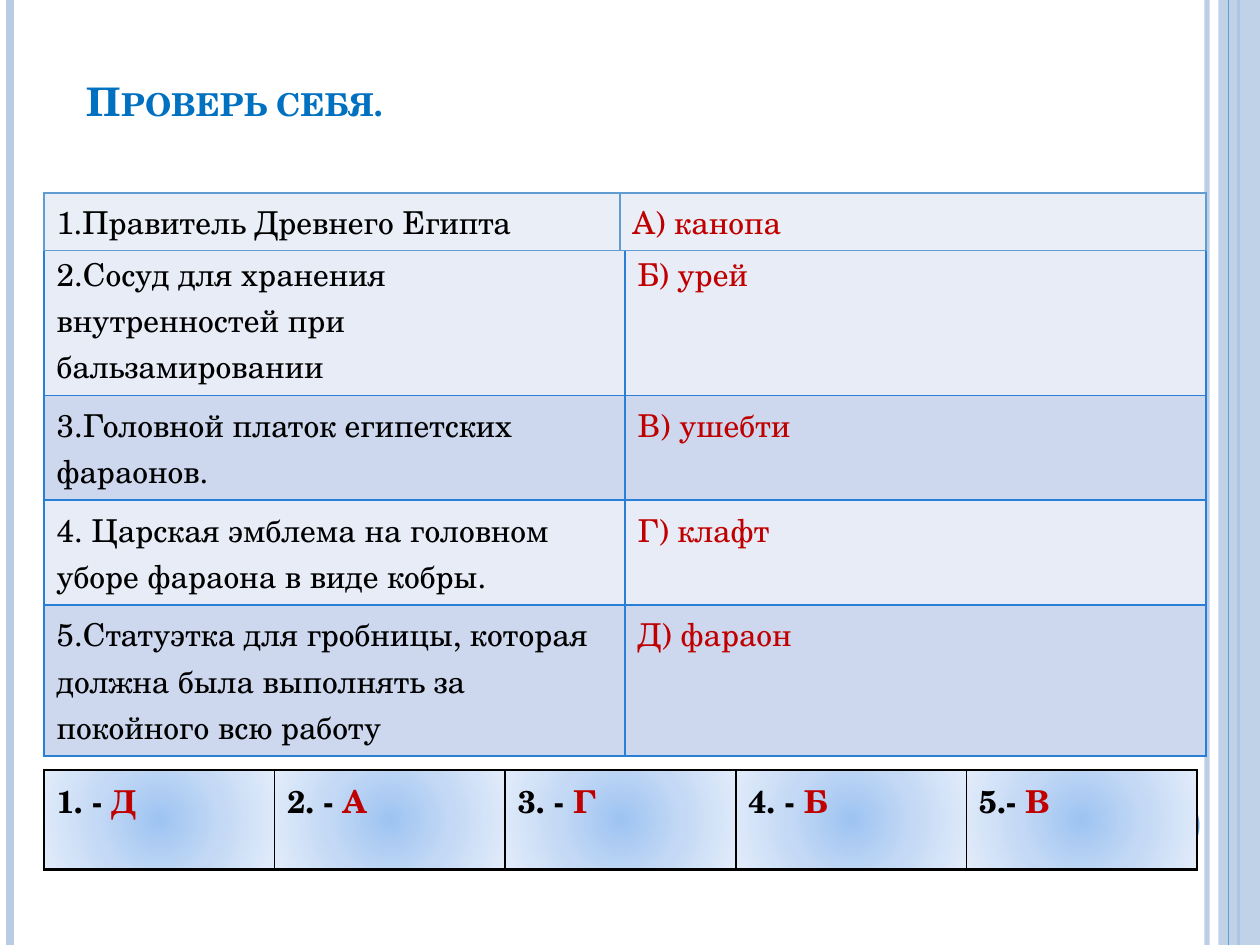
from lxml.etree import SubElement
from pptx import Presentation
from pptx.dml.color import RGBColor
from pptx.enum.shapes import MSO_CONNECTOR, MSO_SHAPE
from pptx.enum.text import MSO_ANCHOR
from pptx.oxml.ns import qn
from pptx.util import Inches, Pt

FONT = "TeX Gyre Schola"
BLACK = RGBColor(0x00, 0x00, 0x00)
RED = RGBColor(0xC0, 0x00, 0x00)
TITLE_BLUE = RGBColor(0x00, 0x70, 0xC0)
PALE_BLUE = RGBColor(0xB7, 0xCC, 0xE5)
ACCENT_BLUE = RGBColor(0x62, 0x9D, 0xD1)
GRID_BLUE = RGBColor(0x29, 0x7F, 0xD5)
FIRST_ROW = RGBColor(0xEA, 0xEF, 0xF7)
LIGHT_ROW = RGBColor(0xE8, 0xEC, 0xF7)
DARK_ROW = RGBColor(0xCD, 0xD8, 0xEF)
GLOW_STOPS = [
    (0, RGBColor(0x9E, 0xC4, 0xF2)),
    (50, RGBColor(0xC4, 0xD9, 0xF5)),
    (100, RGBColor(0xE2, 0xEC, 0xFA)),
]

FIRST_QUESTION = [("1.Правитель Древнего Египта", "А) канопа")]
QUESTIONS = [
    ("2.Сосуд для хранения внутренностей при бальзамировании", "Б) урей"),
    ("3.Головной платок египетских фараонов.", "В) ушебти"),
    ("4. Царская эмблема на головном уборе фараона в виде кобры.", "Г) клафт"),
    ("5.Статуэтка для гробницы, которая должна была выполнять за покойного всю работу",
     "Д) фараон"),
]
ANSWERS = [("1. - ", "Д"), ("2. - ", "А"), ("3. - ", "Г"), ("4. - ", "Б"), ("5.- ", "В")]


def set_alpha(element, percent):
    color = next(element.iter(qn("a:srgbClr")))
    SubElement(color, qn("a:alpha"), val=str(percent * 1000))


def add_stripe(slide, x, color, width, alpha=100):
    line = slide.shapes.add_connector(
        MSO_CONNECTOR.STRAIGHT, Inches(x), 0, Inches(x), Inches(7.5))
    line.line.color.rgb = color
    line.line.width = Pt(width)
    properties = line._element.spPr
    SubElement(properties, qn("a:effectLst"))
    if alpha < 100:
        set_alpha(properties, alpha)


def add_block(slide, kind, left, top, width, height, color, alpha=100):
    shape = slide.shapes.add_shape(
        kind, Inches(left), Inches(top), Inches(width), Inches(height))
    shape.shadow.inherit = False
    shape.fill.solid()
    shape.fill.fore_color.rgb = color
    shape.line.fill.background()
    if alpha < 100:
        set_alpha(shape._element.spPr, alpha)


def add_title(slide, text):
    box = slide.shapes.add_textbox(Inches(0.59), Inches(0.3), Inches(8.11), Inches(0.69))
    frame = box.text_frame
    frame.word_wrap = True
    frame.vertical_anchor = MSO_ANCHOR.BOTTOM
    frame.margin_bottom = 0
    run = frame.paragraphs[0].add_run()
    run.text = text
    run.font.name = FONT
    run.font.size = Pt(22.5)
    run.font.bold = True
    run.font.color.rgb = TITLE_BLUE
    run._r.get_or_add_rPr().set("cap", "small")


def set_borders(cell, color, width, bottom_width):
    properties = cell._tc.get_or_add_tcPr()
    for side in "LRTB":
        points = bottom_width if side == "B" else width
        line = SubElement(properties, qn(f"a:ln{side}"), w=str(Pt(points)))
        fill = SubElement(line, qn("a:solidFill"))
        SubElement(fill, qn("a:srgbClr"), val=str(color))


def fill_with_glow(cell):
    gradient = SubElement(cell._tc.get_or_add_tcPr(), qn("a:gradFill"), rotWithShape="1")
    stops = SubElement(gradient, qn("a:gsLst"))
    for position, color in GLOW_STOPS:
        stop = SubElement(stops, qn("a:gs"), pos=str(position * 1000))
        SubElement(stop, qn("a:srgbClr"), val=str(color))
    circle = SubElement(gradient, qn("a:path"), path="circle")
    SubElement(circle, qn("a:fillToRect"), l="50000", t="50000", r="50000", b="50000")


def write_cell(cell, parts, bold=False):
    paragraph = cell.text_frame.paragraphs[0]
    paragraph.font.name = FONT
    paragraph.font.size = Pt(18)
    paragraph.font.bold = bold
    for text, color in parts:
        run = paragraph.add_run()
        run.text = text
        run.font.color.rgb = color


def add_grid(slide, left, top, widths, heights):
    frame = slide.shapes.add_table(
        len(heights), len(widths), Inches(left), Inches(top),
        Inches(sum(widths)), Inches(sum(heights)))
    table = frame.table
    table.first_row = False
    table.horz_banding = False
    for column, width in zip(table.columns, widths):
        column.width = Inches(width)
    for row, height in zip(table.rows, heights):
        row.height = Inches(height)
    return table


def add_question_table(slide, top, widths, heights, questions, fills, border):
    table = add_grid(slide, 0.35, top, widths, heights)
    for index, texts in enumerate(questions):
        for column, (text, color) in enumerate(zip(texts, (BLACK, RED))):
            cell = table.cell(index, column)
            write_cell(cell, [(text, color)])
            set_borders(cell, border, 1, 1)
            cell.fill.solid()
            cell.fill.fore_color.rgb = fills[index % len(fills)]


def add_answer_table(slide):
    table = add_grid(slide, 0.35, 6.11, [1.83] * len(ANSWERS), [0.79])
    for column, (number, letter) in enumerate(ANSWERS):
        cell = table.cell(0, column)
        write_cell(cell, [(number, BLACK), (letter, RED)], bold=True)
        set_borders(cell, BLACK, 1, 2)
        fill_with_glow(cell)


def main():
    presentation = Presentation()
    presentation.slide_width = Inches(10)
    presentation.slide_height = Inches(7.5)
    slide = presentation.slides.add_slide(presentation.slide_layouts[6])

    add_stripe(slide, 9.58, PALE_BLUE, 3, alpha=93)
    add_stripe(slide, 0.08, PALE_BLUE, 4.5)
    add_stripe(slide, 9.83, ACCENT_BLUE, 1.5)
    add_block(slide, MSO_SHAPE.RECTANGLE, 9.67, 0, 0.33, 7.5, PALE_BLUE, alpha=87)
    add_stripe(slide, 9.75, ACCENT_BLUE, 0.75)
    add_block(slide, MSO_SHAPE.OVAL, 8.92, 6.25, 0.6, 0.6, ACCENT_BLUE)

    add_title(slide, "Проверь себя.")
    add_question_table(slide, 1.94, [4.61, 4.61], [1.2, 0.83, 0.83, 1.2],
                       QUESTIONS, [LIGHT_ROW, DARK_ROW], GRID_BLUE)
    add_answer_table(slide)
    add_question_table(slide, 1.53, [4.57, 4.65], [0.46],
                       FIRST_QUESTION, [FIRST_ROW], ACCENT_BLUE)

    presentation.save("out.pptx")


if __name__ == "__main__":
    main()
